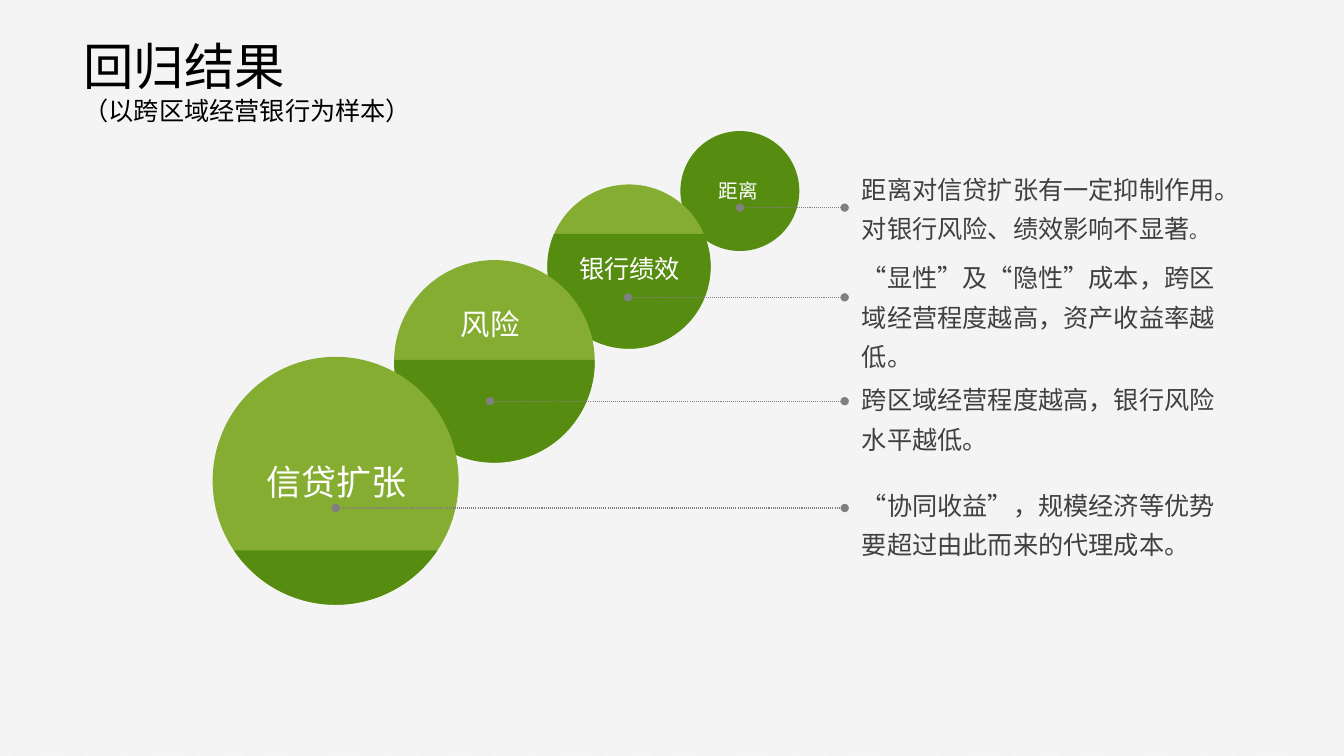
import math
from dataclasses import dataclass

from lxml import etree
from pptx import Presentation
from pptx.dml.color import RGBColor
from pptx.enum.dml import MSO_LINE, MSO_PATTERN
from pptx.enum.lang import MSO_LANGUAGE_ID
from pptx.enum.shapes import MSO_CONNECTOR, MSO_SHAPE
from pptx.enum.text import MSO_ANCHOR, MSO_AUTO_SIZE, PP_ALIGN
from pptx.oxml.ns import qn
from pptx.util import Pt

OVAL = MSO_SHAPE.OVAL
STRAIGHT = MSO_CONNECTOR.STRAIGHT
DOTTED = MSO_LINE.ROUND_DOT
DIAGONAL = MSO_PATTERN.LIGHT_UPWARD_DIAGONAL
MIDDLE, TOP = MSO_ANCHOR.MIDDLE, MSO_ANCHOR.TOP
CENTER, LEFT = PP_ALIGN.CENTER, PP_ALIGN.LEFT
GROW = MSO_AUTO_SIZE.SHAPE_TO_FIT_TEXT
CHINESE = MSO_LANGUAGE_ID.SIMPLIFIED_CHINESE


@dataclass(frozen=True)
class Theme:
    dark: RGBColor = RGBColor.from_string("568D11")
    light: RGBColor = RGBColor.from_string("85AD32")
    gray: RGBColor = RGBColor.from_string("808080")
    note: RGBColor = RGBColor.from_string("404040")
    black: RGBColor = RGBColor.from_string("000000")
    white: RGBColor = RGBColor.from_string("FFFFFF")
    back: RGBColor = RGBColor.from_string("F2F2F2")
    chinese_font: str = "Noto Sans CJK SC"
    note_font: str = "Arial"
    title_font: str = "Calibri"
    title_size: int = 36
    body_size: int = 18
    small_size: int = 14


THEME = Theme()
TITLE = [("回归结果", THEME.title_size), ("（以跨区域经营银行为样本）", THEME.body_size)]
TITLE_BOX = (52.56, 21.6, 455.04, 72.72)

# From the back ball to the front one: ball box, top of its dark part, label,
# label size, label box, pointer start, note, note top and note height.
BALLS = [
    dict(ball=(486, 93.6, 84.96, 85.68), level=None,
         label="距离", size=14, label_box=(506.88, 124.56, 41.04, 23.76),
         pointer=(528.48, 148.32), note="距离对信贷扩张有一定抑制作用。对银行风险、绩效影响不显著",
         small_end="。", note_top=114.48, note_height=63.36),
    dict(ball=(390.96, 131.76, 116.64, 117.36), level=167.04,
         label="银行绩效", size=18, label_box=(406.8, 177.84, 85.68, 28.08),
         pointer=(448.56, 212.4), note="“显性”及“隐性”成本，跨区域经营程度越高，资产收益率越低。",
         small_end="", note_top=177.84, note_height=91.44),
    dict(ball=(281.52, 185.76, 143.28, 144.72), level=257.04,
         label="风险", size=21, label_box=(322.56, 215.28, 55.44, 31.68),
         pointer=(349.92, 286.56), note="跨区域经营程度越高，银行风险水平越低。",
         small_end="", note_top=264.96, note_height=63.36),
    dict(ball=(151.92, 254.88, 175.68, 177.12), level=393.12,
         label="信贷扩张", size=25, label_box=(183.6, 325.44, 113.76, 36.72),
         pointer=(239.76, 362.88), note="“协同收益”，规模经济等优势要超过由此而来的代理成本。",
         small_end="", note_top=340.56, note_height=63.36),
]
POINTER_END = 603.36
NOTE_LEFT, NOTE_WIDTH = 609.12, 269.28
SIDE_INSET, TOP_INSET = 6.6, 3.3


def paint(shape, color):
    shape.shadow.inherit = False
    shape.fill.solid()
    shape.fill.fore_color.rgb = color
    shape.line.fill.background()


def add_ball(shapes, box, level):
    ball = shapes.add_shape(OVAL, *map(Pt, box))
    paint(ball, THEME.dark if level is None else THEME.light)
    if level is not None:
        add_dark_part(shapes, box, level)


def add_dark_part(shapes, box, level):
    """Cover the part of a ball below the level, bounded by Bezier arcs."""
    left, top, width, height = box
    radius_x, radius_y = width / 2, height / 2
    middle_x, middle_y = left + radius_x, top + radius_y

    def place(angle, pull=0.0):
        """Point on the ball's edge, moved along the tangent by pull."""
        x = math.cos(angle) - pull * math.sin(angle)
        y = math.sin(angle) + pull * math.cos(angle)
        return Pt(middle_x + radius_x * x), Pt(middle_y + radius_y * y)

    start = math.asin((level - middle_y) / radius_y)
    quarters = [angle for angle in (0, math.pi / 2, math.pi)
                if start < angle < math.pi - start]
    angles = [start, *quarters, math.pi - start]
    builder = shapes.build_freeform(*place(angles[-1]))
    builder.add_line_segments([place(angle) for angle in angles], close=True)
    part = builder.convert_to_shape()
    paint(part, THEME.dark)

    edges = list(part._element.iter(qn("a:lnTo")))[1:]
    for edge, first, last in zip(edges, angles, angles[1:]):
        pull = 4 / 3 * math.tan((last - first) / 4)
        curve = etree.Element(qn("a:cubicBezTo"))
        for x, y in (place(first, pull), place(last, -pull), place(last)):
            etree.SubElement(curve, qn("a:pt"), x=str(x - part.left), y=str(y - part.top))
        edge.getparent().replace(edge, curve)


def add_pointer(shapes, x, y):
    pointer = shapes.add_connector(STRAIGHT, Pt(x), Pt(y), Pt(POINTER_END), Pt(y))
    pointer.line.color.rgb = THEME.gray
    pointer.line.width = Pt(0.75)
    pointer.line.dash_style = DOTTED
    outline = pointer.line._get_or_add_ln()
    for end in ("a:headEnd", "a:tailEnd"):
        etree.SubElement(outline, qn(end), type="oval")
    etree.SubElement(pointer._element.spPr, qn("a:effectLst"))


def add_text_box(shapes, box, wrap, anchor):
    frame = shapes.add_textbox(*map(Pt, box)).text_frame
    frame.word_wrap = wrap
    frame.auto_size = GROW
    frame.vertical_anchor = anchor
    return frame


def set_insets(frame, side, top):
    frame.margin_left = frame.margin_right = Pt(side)
    frame.margin_top = frame.margin_bottom = Pt(top)


def write(para, text, font_name, size, color, align=LEFT):
    para.alignment = align
    font = para.font
    font.size, font.name = Pt(size), font_name
    font.color.rgb = color
    defaults = para._p.pPr.find(qn("a:defRPr"))
    etree.SubElement(defaults, qn("a:ea"), typeface=THEME.chinese_font)
    span = para.add_run()
    span.text = text
    span.font.language_id = CHINESE


def add_label(shapes, item):
    frame = add_text_box(shapes, item["label_box"], False, MIDDLE)
    set_insets(frame, 0, TOP_INSET)
    write(frame.paragraphs[0], item["label"], THEME.chinese_font,
          item["size"], THEME.white, CENTER)


def add_note(shapes, item):
    box = (NOTE_LEFT, item["note_top"], NOTE_WIDTH, item["note_height"])
    frame = add_text_box(shapes, box, True, TOP)
    set_insets(frame, SIDE_INSET, TOP_INSET)
    para = frame.paragraphs[0]
    write(para, item["note"], THEME.note_font, THEME.body_size, THEME.note)
    para.line_spacing = 1.3
    if item["small_end"]:
        span = para.add_run()
        span.text = item["small_end"]
        span.font.size = Pt(THEME.small_size)
        span.font.name = THEME.chinese_font


def add_title(shapes):
    frame = add_text_box(shapes, TITLE_BOX, True, TOP)
    for index, (text, size) in enumerate(TITLE):
        para = frame.add_paragraph() if index else frame.paragraphs[0]
        write(para, text, THEME.title_font, size, THEME.black)


def main():
    deck = Presentation()
    deck.slide_width, deck.slide_height = Pt(960), Pt(540)
    page = deck.slides.add_slide(deck.slide_layouts[6])
    back = page.background.fill
    back.patterned()
    back.pattern = DIAGONAL
    back.fore_color.rgb, back.back_color.rgb = THEME.white, THEME.back
    for item in BALLS:
        add_ball(page.shapes, item["ball"], item["level"])
    for item in reversed(BALLS):
        add_label(page.shapes, item)
    for item in BALLS:
        add_pointer(page.shapes, *item["pointer"])
    for item in reversed(BALLS):
        add_note(page.shapes, item)
    add_title(page.shapes)
    deck.save("out.pptx")


if __name__ == "__main__":
    main()
